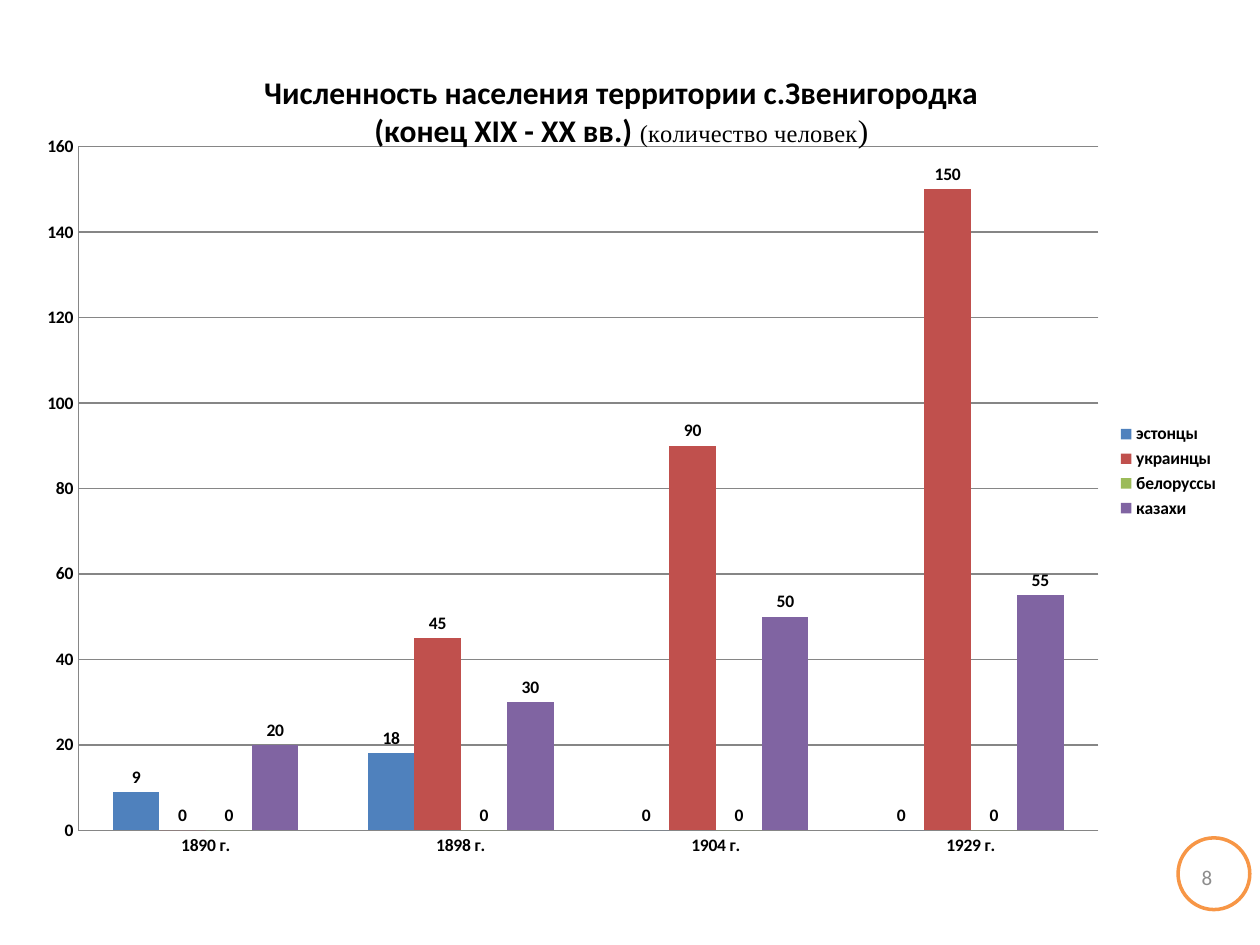
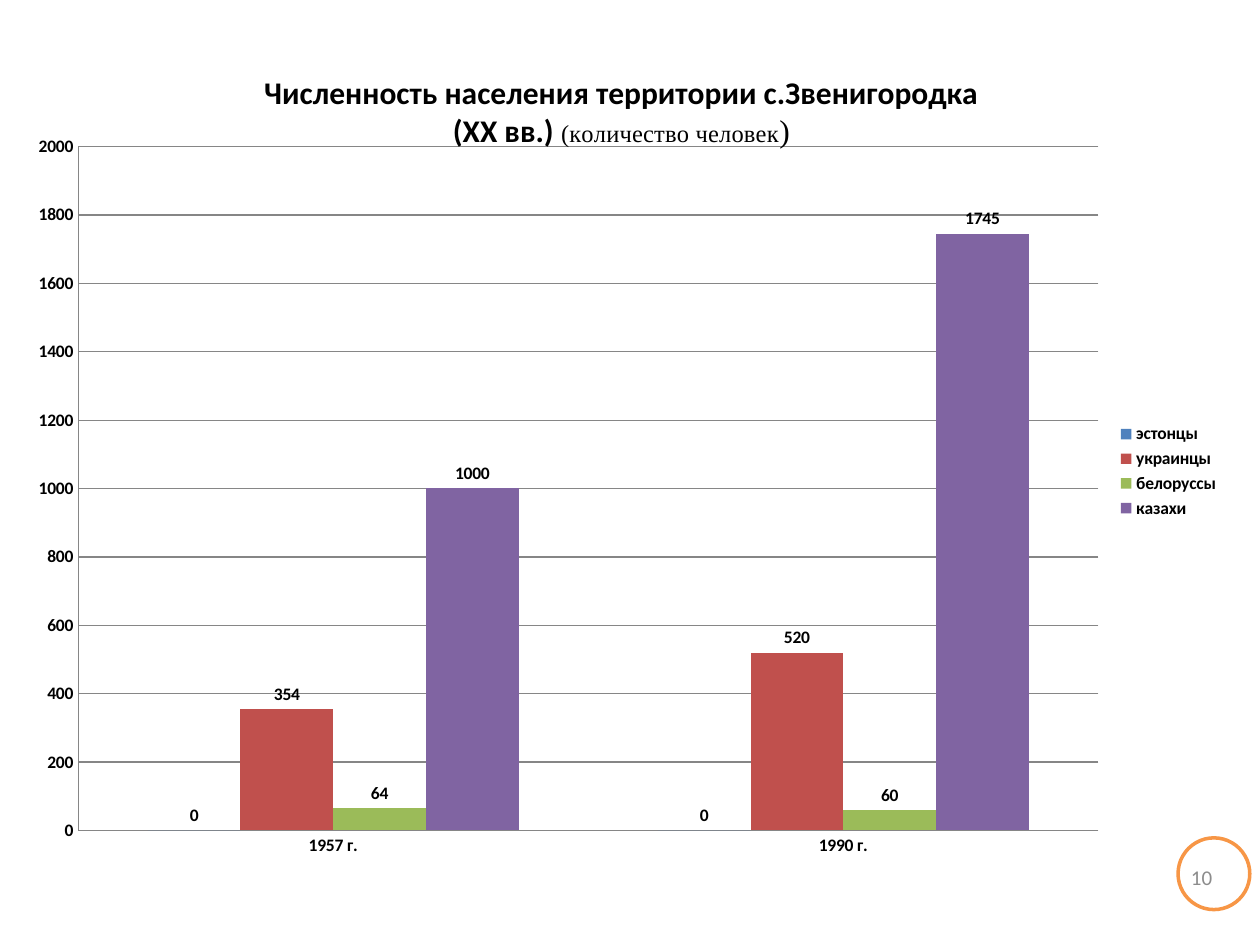
from lxml.etree import SubElement
from pptx import Presentation
from pptx.chart.data import CategoryChartData
from pptx.dml.color import RGBColor
from pptx.enum.chart import XL_CHART_TYPE, XL_LABEL_POSITION, XL_LEGEND_POSITION, XL_TICK_MARK
from pptx.enum.shapes import MSO_SHAPE
from pptx.enum.text import MSO_ANCHOR, PP_ALIGN
from pptx.oxml import parse_xml
from pptx.oxml.ns import nsdecls, qn
from pptx.util import Pt

THEME = {
    "text": RGBColor.from_string("000000"),
    "white": RGBColor.from_string("FFFFFF"),
    "ring": RGBColor.from_string("F79646"),
    "number": RGBColor.from_string("8C8C8C"),
    "grid": RGBColor.from_string("868686"),
    "series": [RGBColor.from_string(c) for c in ("4F81BD", "C0504D", "9BBB59", "8064A2")],
    "font": "Calibri",
    "serif": "Times New Roman",
    "title_pt": Pt(18),
    "note_pt": Pt(14),
    "number_pt": Pt(12),
    "chart_pt": Pt(10),
}
NATIONS = ["эстонцы", "украинцы", "белоруссы", "казахи"]
TITLE = "Численность населения территории с.Звенигородка"
SLIDES = [
    {
        "number": "8",
        "period": "(конец ΧΙΧ - ΧΧ вв.) ",
        "years": ["1890 г.", "1898 г.", "1904 г.", "1929 г."],
        "counts": [(9, 18, 0, 0), (0, 45, 90, 150), (0, 0, 0, 0), (20, 30, 50, 55)],
        "scale": {"minimum_scale": 0, "maximum_scale": 160, "major_unit": 20},
    },
    {
        "number": "10",
        "period": "(ΧΧ вв.) ",
        "years": ["1957 г.", "1990 г."],
        "counts": [(0, 0), (354, 520), (64, 60), (1000, 1745)],
        "scale": {"minimum_scale": 0, "maximum_scale": 2000, "major_unit": 200},
    },
]


def style(font, name, size, color, bold=False):
    for key, value in {"name": name, "size": size, "bold": bold}.items():
        setattr(font, key, value)
    font.color.rgb = color


def place(parent, index, values):
    for old in parent.findall(qn("c:layout")):
        parent.remove(old)
    layout = parse_xml(f"<c:layout {nsdecls('c')}><c:manualLayout/></c:layout>")
    for tag, value in values.items():
        SubElement(layout[0], qn(f"c:{tag}")).set("val", str(value))
    parent.insert(index, layout)


prs = Presentation()
prs.slide_width, prs.slide_height = Pt(720), Pt(540)

for item in SLIDES:
    s = prs.slides.add_slide(prs.slide_layouts[6])

    ring = s.shapes.add_shape(MSO_SHAPE.OVAL, Pt(673.2), Pt(478.8), Pt(41), Pt(41))
    ring.shadow.inherit = False
    ring.fill.solid()
    ring.fill.fore_color.rgb = THEME["white"]
    ring.line.color.rgb = THEME["ring"]
    ring.line.width = Pt(2)

    number = s.shapes.add_textbox(Pt(662.4), Pt(486.7), Pt(37.4), Pt(28.8))
    tf = number.text_frame
    tf.word_wrap = True
    tf.vertical_anchor = MSO_ANCHOR.MIDDLE
    p = tf.paragraphs[0]
    p.alignment = PP_ALIGN.RIGHT
    r = p.add_run()
    r.text = item["number"]
    style(r.font, THEME["font"], THEME["number_pt"], THEME["number"])

    data = CategoryChartData()
    data.categories = item["years"]
    for nation, counts in zip(NATIONS, item["counts"]):
        data.add_series(nation, counts)
    chart = s.shapes.add_chart(XL_CHART_TYPE.COLUMN_CLUSTERED, Pt(10), Pt(18.7),
                               Pt(694), Pt(501), data).chart
    style(chart.font, THEME["font"], THEME["chart_pt"], THEME["text"])
    chart._chartSpace.find(qn("c:chart")).addnext(parse_xml(
        f"<c:spPr {nsdecls('c', 'a')}><a:noFill/><a:ln><a:noFill/></a:ln></c:spPr>"))

    tf = chart.chart_title.text_frame
    heading, subheading = tf.paragraphs[0], tf.add_paragraph()
    for p, text, name, size, bold in [
        (heading, TITLE, THEME["font"], THEME["title_pt"], True),
        (subheading, item["period"], THEME["font"], THEME["title_pt"], True),
        (subheading, "(количество человек", THEME["serif"], THEME["note_pt"], False),
        (subheading, ")", THEME["serif"], THEME["title_pt"], False),
    ]:
        r = p.add_run()
        r.text = text
        style(r.font, name, size, THEME["text"], bold)
    place(chart.chart_title._element, 1,
          {"xMode": "edge", "yMode": "edge", "x": 0.2, "y": 0.04})
    place(chart._chartSpace.chart.plotArea, 0,
          {"layoutTarget": "inner", "xMode": "edge", "yMode": "edge",
           "x": 0.05, "y": 0.13, "w": 0.84, "h": 0.78})

    plot = chart.plots[0]
    for key, value in {"vary_by_categories": False, "gap_width": 150, "overlap": 0,
                       "has_data_labels": True}.items():
        setattr(plot, key, value)
    labels = plot.data_labels
    labels.show_value = True
    labels.position = XL_LABEL_POSITION.OUTSIDE_END
    style(labels.font, THEME["font"], THEME["chart_pt"], THEME["text"], True)
    for series, color in zip(plot.series, THEME["series"]):
        series.format.fill.solid()
        series.format.fill.fore_color.rgb = color

    for axis in (chart.category_axis, chart.value_axis):
        axis.major_tick_mark = axis.minor_tick_mark = XL_TICK_MARK.NONE
        axis.format.line.color.rgb = THEME["grid"]
        style(axis.tick_labels.font, THEME["font"], THEME["chart_pt"], THEME["text"], True)
    for key, value in item["scale"].items():
        setattr(chart.value_axis, key, value)
    chart.value_axis.major_gridlines.format.line.color.rgb = THEME["grid"]

    chart.has_legend = True
    chart.legend.position = XL_LEGEND_POSITION.RIGHT
    chart.legend.include_in_layout = False
    style(chart.legend.font, THEME["font"], THEME["chart_pt"], THEME["text"], True)

prs.save("out.pptx")
